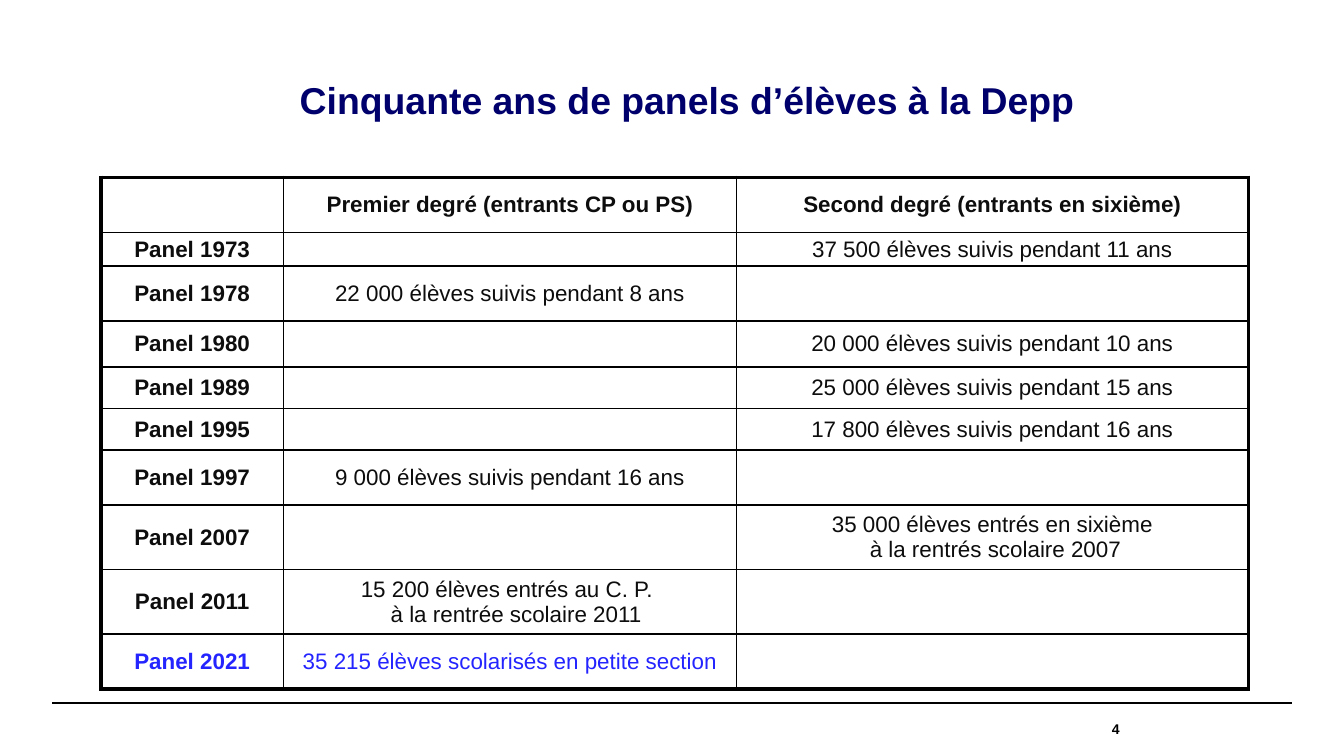
from lxml.etree import SubElement
from pptx import Presentation
from pptx.dml.color import RGBColor
from pptx.enum.shapes import MSO_CONNECTOR
from pptx.enum.text import MSO_ANCHOR, PP_ALIGN
from pptx.oxml.ns import qn
from pptx.util import Inches, Pt

# Content: panel, first-degree cohort, second-degree cohort
TITLE = "Cinquante ans de panels d’élèves à la Depp"
PAGE = "4"
PANELS = [
    ("", "Premier degré (entrants CP ou PS)", "Second degré (entrants en sixième)"),
    ("Panel 1973", "", "37 500 élèves suivis pendant 11 ans"),
    ("Panel 1978", "22 000 élèves suivis pendant 8 ans", ""),
    ("Panel 1980", "", "20 000 élèves suivis pendant 10 ans"),
    ("Panel 1989", "", "25 000 élèves suivis pendant 15 ans"),
    ("Panel 1995", "", "17 800 élèves suivis pendant 16 ans"),
    ("Panel 1997", "9 000 élèves suivis pendant 16 ans", ""),
    ("Panel 2007", "", "35 000 élèves entrés en sixième\n à la rentrés scolaire 2007"),
    ("Panel 2011", "15 200 élèves entrés au C. P. \n  à la rentrée scolaire 2011", ""),
    ("Panel 2021", "35 215 élèves scolarisés en petite section", ""),
]
COLUMNS = [1.36, 3.37, 3.81]
ROWS = [0.41, 0.25, 0.41, 0.34, 0.31, 0.31, 0.41, 0.43, 0.43, 0.41]
COLORS = {"title": "00006D", "text": "0D0D0D", "latest": "2424FF", "line": "000000"}
FONT = "Arial"
THIN, THICK = 1, 2.25


def add_text(paragraph, text, size, color, bold, align):
    paragraph.alignment = align
    for number, line in enumerate(text.split("\n")):
        if number:
            paragraph.add_line_break()
            # The break takes the text size, so the row does not grow
            SubElement(paragraph._p[-1], qn("a:rPr"), sz=str(int(size * 100)))
        run = paragraph.add_run()
        run.text = line
        run.font.name, run.font.size, run.font.bold = FONT, Pt(size), bold
        run.font.color.rgb = RGBColor.from_string(COLORS[color])


def place(shape, left, top, width, height):
    shape.left, shape.top = Inches(left), Inches(top)
    shape.width, shape.height = Inches(width), Inches(height)


def clear_margins(frame, anchor):
    frame.word_wrap, frame.vertical_anchor = True, anchor
    frame.margin_left = frame.margin_right = frame.margin_top = frame.margin_bottom = 0


def set_borders(cell, widths):
    properties = cell._tc.get_or_add_tcPr()
    for position, (side, width) in enumerate(widths.items()):
        border = properties.makeelement(qn(f"a:ln{side}"), {"w": str(Pt(width))})
        fill = SubElement(border, qn("a:solidFill"))
        SubElement(fill, qn("a:srgbClr"), val=COLORS["line"])
        properties.insert(position, border)


# A 16:9 slide, ten inches wide
prs = Presentation()
prs.slide_width = Inches(10)
prs.slide_height = prs.slide_width * 9 // 16
slide = prs.slides.add_slide(prs.slide_layouts[5])

# Footer rule
rule = slide.shapes.add_connector(
    MSO_CONNECTOR.STRAIGHT, Inches(0.39), Inches(5.23), Inches(9.61), Inches(5.23))
rule.line.width = Pt(0.8)
rule.line.color.rgb = RGBColor.from_string(COLORS["line"])
SubElement(rule._element.spPr, qn("a:effectLst"))

# Title
title = slide.shapes.title
place(title, 0.51, 0.61, 9.21, 0.63)
clear_margins(title.text_frame, MSO_ANCHOR.TOP)
heading = title.text_frame.paragraphs[0]
heading.line_spacing = 0.9
add_text(heading, TITLE, 20, "title", True, PP_ALIGN.CENTER)

# Page number
page = slide.shapes.add_textbox(Inches(6.85), Inches(5.23), Inches(1.48), Inches(0.39))
clear_margins(page.text_frame, MSO_ANCHOR.MIDDLE)
add_text(page.text_frame.paragraphs[0], PAGE, 7.5, "line", True, PP_ALIGN.RIGHT)

# Panel table, with a thick outer frame
panels = slide.shapes.add_table(
    len(ROWS), len(COLUMNS), Inches(0.75), Inches(1.32),
    Inches(sum(COLUMNS)), Inches(sum(ROWS))).table
panels.horz_banding = panels.first_row = False
for column, width in zip(panels.columns, COLUMNS):
    column.width = Inches(width)
for row, height in zip(panels.rows, ROWS):
    row.height = Inches(height)

last_row, last_col = len(ROWS) - 1, len(COLUMNS) - 1
for r, entries in enumerate(PANELS):
    for c, text in enumerate(entries):
        cell = panels.cell(r, c)
        cell.fill.background()
        cell.vertical_anchor = MSO_ANCHOR.MIDDLE
        cell.margin_left = cell.margin_right = Inches(0.07)
        cell.margin_top = cell.margin_bottom = Inches(0.01 if r == 1 else 0.04)
        paragraph = cell.text_frame.paragraphs[0]
        if text:
            add_text(paragraph, text, 12, "latest" if r == last_row else "text",
                     r == 0 or c == 0, PP_ALIGN.CENTER)
        else:
            SubElement(paragraph._p, qn("a:endParaRPr"), sz="1200")
        set_borders(cell, {
            "L": THICK if c == 0 else THIN,
            "R": THICK if c == last_col else THIN,
            "T": THICK if r == 0 else THIN,
            "B": THICK if r == last_row else THIN,
        })

prs.save("out.pptx")
